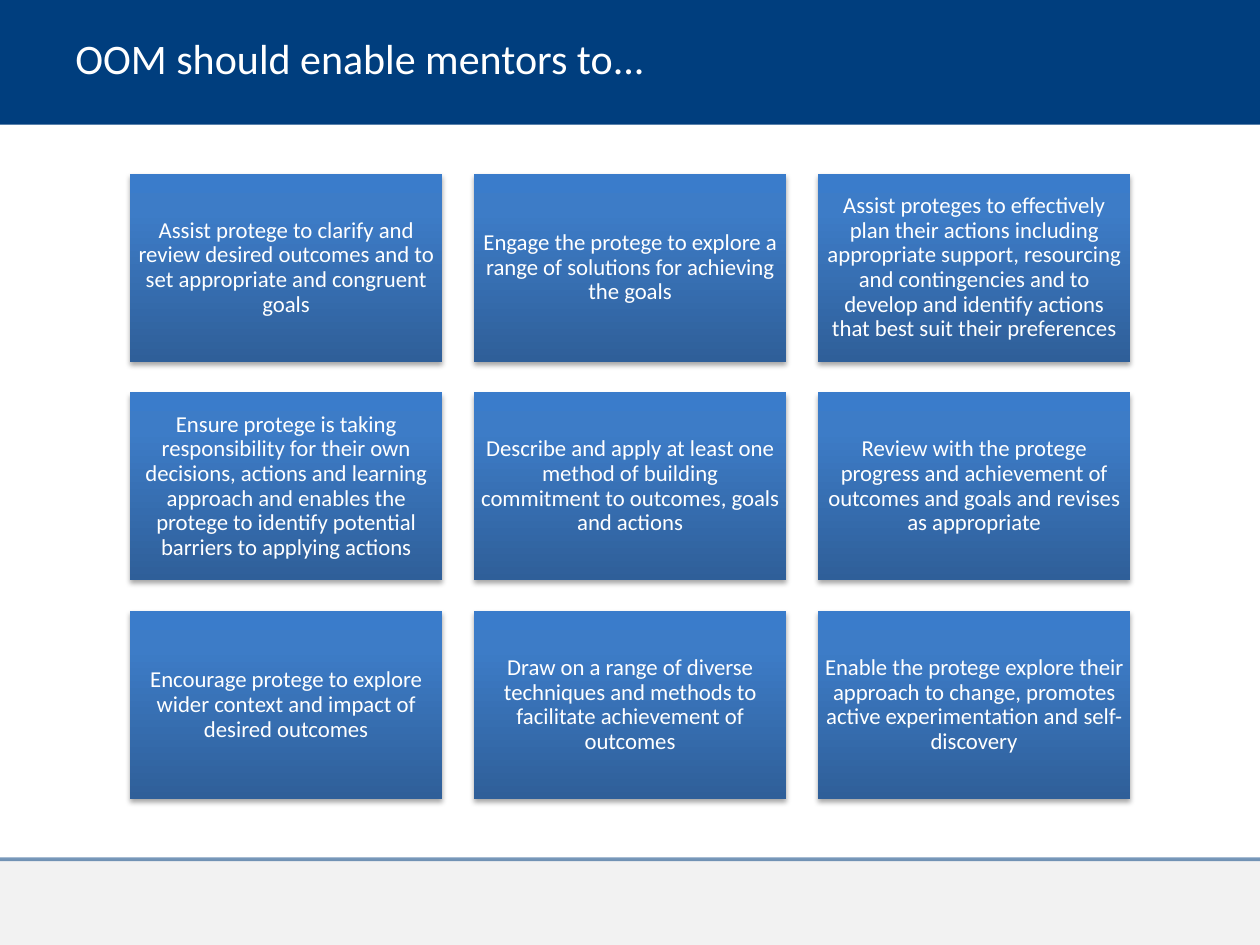
from dataclasses import dataclass

from lxml.etree import SubElement
from pptx import Presentation
from pptx.dml.color import RGBColor
from pptx.enum.shapes import MSO_CONNECTOR, MSO_SHAPE
from pptx.enum.text import MSO_ANCHOR as Anchor, PP_ALIGN as Align
from pptx.oxml import parse_xml
from pptx.oxml.ns import nsdecls, qn
from pptx.util import Inches, Pt

SLIDE_W, SLIDE_H = 10, 7.5
HEADER_H, FOOTER_TOP = 0.99, 6.82
GRID_LEFT, GRID_TOP, COLUMNS = 1.03, 1.38, 3
CARD_W, CARD_H = 2.48, 1.49
COLUMN_STEP, ROW_STEP = 2.73, 1.735

FONT = "Calibri"
WHITE = RGBColor(0xFF, 0xFF, 0xFF)
NAVY = RGBColor(0x00, 0x3E, 0x7E)
GREY = RGBColor(0x80, 0x80, 0x80)
CARD_STOPS = (
    (0, RGBColor(0x2F, 0x5F, 0x99)),
    (80, RGBColor(0x3D, 0x7C, 0xC7)),
    (100, RGBColor(0x3A, 0x7C, 0xCB)),
)

MENTOR_TASKS = (
    "Assist protege to clarify and review desired outcomes and to set "
    "appropriate and congruent goals",
    "Engage the protege to explore a range of solutions for achieving the goals",
    "Assist proteges to effectively plan their actions including appropriate "
    "support, resourcing and contingencies and to develop and identify actions "
    "that best suit their preferences",
    "Ensure protege is taking responsibility for their own decisions, actions "
    "and learning approach and enables the protege to identify potential "
    "barriers to applying actions",
    "Describe and apply at least one method of building commitment to outcomes, "
    "goals and actions",
    "Review with the protege progress and achievement of outcomes and goals and "
    "revises as appropriate",
    "Encourage protege to explore wider context and impact of desired outcomes",
    "Draw on a range of diverse techniques and methods to facilitate "
    "achievement of outcomes",
    "Enable the protege explore their approach to change, promotes active "
    "experimentation and self-discovery",
)


@dataclass(frozen=True)
class Box:
    left: float
    top: float
    width: float
    height: float

    def emu(self) -> tuple:
        return tuple(Inches(v) for v in (self.left, self.top, self.width, self.height))


@dataclass(frozen=True)
class Card:
    text: str
    column: int
    row: int

    def box(self) -> Box:
        return Box(GRID_LEFT + self.column * COLUMN_STEP,
                   GRID_TOP + self.row * ROW_STEP, CARD_W, CARD_H)


def set_alpha(fill_owner, percent: int) -> None:
    colour = next(fill_owner.iter(qn("a:srgbClr")))
    SubElement(colour, qn("a:alpha"), val=str(percent * 1000))


def add_band(slide, box: Box, colour: RGBColor):
    band = slide.shapes.add_shape(MSO_SHAPE.RECTANGLE, *box.emu())
    band.shadow.inherit = False
    band.fill.solid()
    band.fill.fore_color.rgb = colour
    band.line.fill.background()
    return band


def write_text(frame, text: str, size: float, align: Align) -> None:
    frame.word_wrap = True
    frame.vertical_anchor = Anchor.MIDDLE
    paragraph = frame.paragraphs[0]
    paragraph.alignment = align
    paragraph.line_spacing = 0.9
    run = paragraph.add_run()
    run.text = text
    run.font.name = FONT
    run.font.size = Pt(size)
    run.font.color.rgb = WHITE


def style_card(card_shape) -> None:
    """Give a card its vertical gradient and soft drop shadow."""
    card_shape.line.fill.background()
    properties = card_shape._element.spPr
    stops = "".join(
        f'<a:gs pos="{position * 1000}"><a:srgbClr val="{colour}"/></a:gs>'
        for position, colour in CARD_STOPS)
    properties.find(qn("a:ln")).addprevious(parse_xml(
        f'<a:gradFill {nsdecls("a")} rotWithShape="1"><a:gsLst>{stops}</a:gsLst>'
        '<a:lin ang="16200000" scaled="0"/></a:gradFill>'))
    properties.append(parse_xml(
        f'<a:effectLst {nsdecls("a")}><a:outerShdw blurRad="{Pt(3.1)}" '
        f'dist="{Pt(1.8)}" dir="5400000" rotWithShape="0">'
        '<a:srgbClr val="000000"><a:alpha val="35000"/></a:srgbClr>'
        '</a:outerShdw></a:effectLst>'))


def add_card(slide, card: Card) -> None:
    shape = slide.shapes.add_shape(MSO_SHAPE.RECTANGLE, *card.box().emu())
    style_card(shape)
    frame = shape.text_frame
    frame.margin_left = frame.margin_right = Inches(0.05)
    frame.margin_top = frame.margin_bottom = Inches(0.05)
    write_text(frame, card.text, 13, Align.CENTER)


def add_footer_rule(slide) -> None:
    height = Inches(FOOTER_TOP)
    rule = slide.shapes.add_connector(
        MSO_CONNECTOR.STRAIGHT, 0, height, Inches(SLIDE_W), height)
    rule.line.color.rgb = NAVY
    rule.line.width = Pt(2.25)
    set_alpha(rule._element.spPr, 52)
    SubElement(rule._element.spPr, qn("a:effectLst"))


def main() -> None:
    deck = Presentation()
    deck.slide_width, deck.slide_height = Inches(SLIDE_W), Inches(SLIDE_H)
    slide = deck.slides.add_slide(deck.slide_layouts[6])

    # Header and footer bands
    add_band(slide, Box(0, 0, SLIDE_W, HEADER_H), NAVY)
    footer = add_band(
        slide, Box(0, FOOTER_TOP, SLIDE_W, SLIDE_H - FOOTER_TOP), GREY)
    set_alpha(footer._element.spPr, 10)
    add_footer_rule(slide)

    # Title
    title = slide.shapes.add_textbox(*Box(0.5, 0.14, 6.94, 0.69).emu())
    write_text(title.text_frame, "OOM should enable mentors to...", 24, Align.LEFT)

    # Grid of mentor tasks
    for index, task in enumerate(MENTOR_TASKS):
        row, column = divmod(index, COLUMNS)
        add_card(slide, Card(task, column, row))

    deck.save("out.pptx")


if __name__ == "__main__":
    main()
